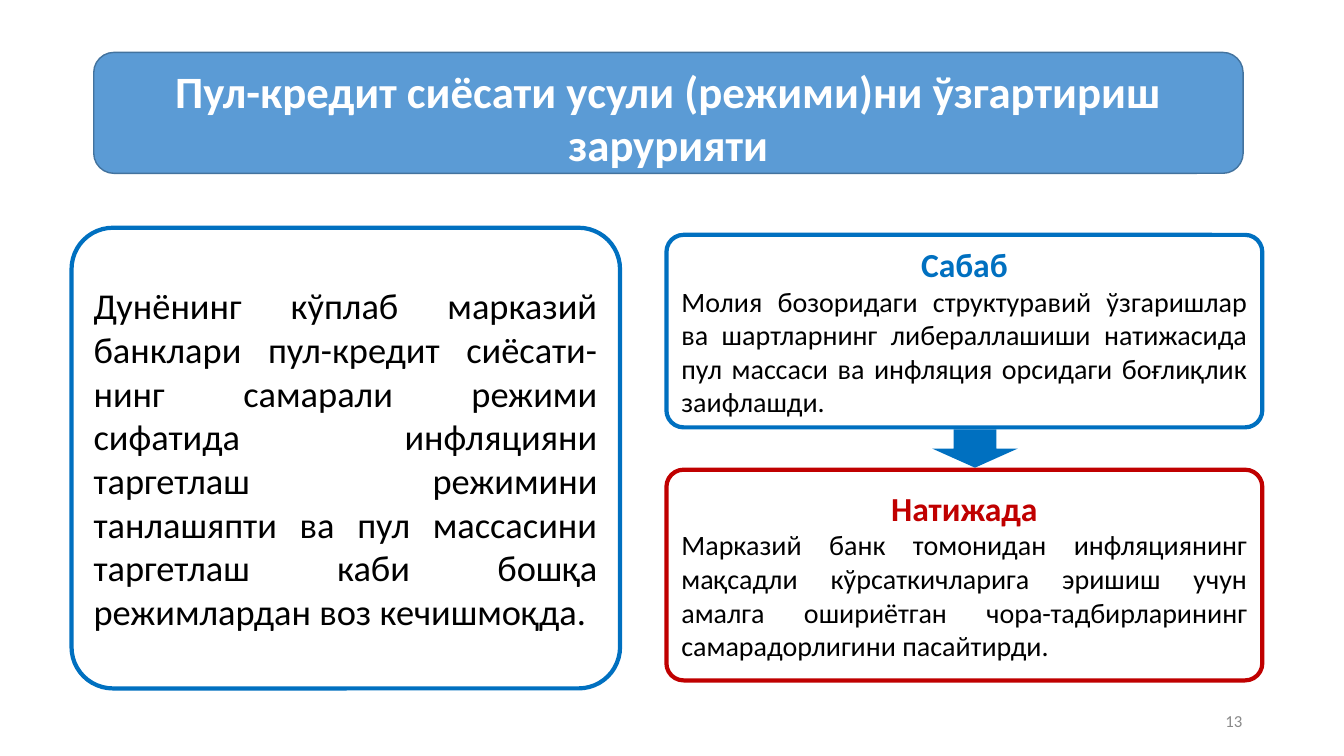
from dataclasses import dataclass

from pptx import Presentation
from pptx.dml.color import RGBColor
from pptx.enum.shapes import MSO_SHAPE
from pptx.enum.text import MSO_ANCHOR, PP_ALIGN
from pptx.util import Inches, Pt

# Content
TITLE = "Пул-кредит сиёсати усули (режими)ни ўзгартириш зарурияти"
OVERVIEW = (
    "Дунёнинг кўплаб марказий банклари пул-кредит сиёсати-нинг самарали "
    "режими сифатида инфляцияни таргетлаш режимини танлашяпти ва пул "
    "массасини таргетлаш каби бошқа режимлардан воз кечишмоқда."
)
CAUSE = (
    "Сабаб",
    "Молия бозоридаги структуравий ўзгаришлар ва шартларнинг либераллашиши "
    "натижасида пул массаси ва инфляция орсидаги боғлиқлик заифлашди.",
)
RESULT = (
    "Натижада",
    "Марказий банк томонидан инфляциянинг мақсадли кўрсаткичларига эришиш учун "
    "амалга ошириётган чора-тадбирларининг самарадорлигини пасайтирди.",
)
PAGE_NUMBER = "13"


@dataclass(frozen=True)
class Theme:
    font: str = "Calibri"
    blue: str = "0070C0"
    red: str = "C00000"
    banner: str = "5B9BD5"
    banner_edge: str = "43739E"
    ink: str = "000000"
    white: str = "FFFFFF"
    grey: str = "898989"
    title: int = 32
    overview: int = 26
    heading: int = 24
    body: int = 20
    number: int = 12
    frame: int = 3


THEME = Theme()

# Layout in inches: left, top, width, height
SLIDE_W, SLIDE_H = 13.33, 7.5
BANNER_BOX = (0.93, 0.52, 11.4, 1.2)
OVERVIEW_BOX = (0.71, 2.26, 5.44, 4.57)
RIGHT_COLUMN, RIGHT_W = 6.61, 5.91
CAUSE_BOX = (RIGHT_COLUMN, 2.33, RIGHT_W, 1.91)
RESULT_BOX = (RIGHT_COLUMN, 4.66, RIGHT_W, 2.09)
ARROW_W, ARROW_H = 0.85, 0.38
ARROW_CENTER = 9.67
NUMBER_BOX = (9.42, 6.95, 3, 0.4)
CORNER = 0.17  # corner radius of the right-hand cards
OVERVIEW_CORNER = 0.41


def add_shape(slide, kind, box, fill=None, line=None, width=1, radius=None):
    shape = slide.shapes.add_shape(kind, *map(Inches, box))
    shape.shadow.inherit = False
    if fill:
        shape.fill.solid()
        shape.fill.fore_color.rgb = RGBColor.from_string(fill)
    else:
        shape.fill.background()
    if line:
        shape.line.color.rgb = RGBColor.from_string(line)
        shape.line.width = Pt(width)
    else:
        shape.line.fill.background()
    if radius:
        shape.adjustments[0] = radius / min(box[2:])
    return shape


def write(shape, lines, anchor=MSO_ANCHOR.MIDDLE):
    """Each line is text, size, colour, bold, alignment."""
    frame = shape.text_frame
    frame.word_wrap = True
    frame.vertical_anchor = anchor
    frame.text = "\n".join(line[0] for line in lines)
    for paragraph, (_, size, color, bold, align) in zip(frame.paragraphs, lines):
        paragraph.alignment = align
        for run in paragraph.runs:
            run.font.name = THEME.font
            run.font.size = Pt(size)
            run.font.bold = bold
            run.font.color.rgb = RGBColor.from_string(color)


def add_card(slide, box, content, color):
    heading, body = content
    card = add_shape(slide, MSO_SHAPE.ROUNDED_RECTANGLE, box,
                     line=color, width=THEME.frame, radius=CORNER)
    write(card, [
        (heading, THEME.heading, color, True, PP_ALIGN.CENTER),
        (body, THEME.body, THEME.ink, False, PP_ALIGN.JUSTIFY),
    ])


def main():
    deck = Presentation()
    deck.slide_width, deck.slide_height = Inches(SLIDE_W), Inches(SLIDE_H)
    slide = deck.slides.add_slide(deck.slide_layouts[6])

    # Cause leads to result
    add_card(slide, CAUSE_BOX, CAUSE, THEME.blue)
    add_card(slide, RESULT_BOX, RESULT, THEME.red)
    gap_middle = (CAUSE_BOX[1] + CAUSE_BOX[3] + RESULT_BOX[1]) / 2
    arrow_box = (ARROW_CENTER - ARROW_W / 2, gap_middle - ARROW_H / 2, ARROW_W, ARROW_H)
    add_shape(slide, MSO_SHAPE.DOWN_ARROW, arrow_box, fill=THEME.blue)

    # Page number
    number = slide.shapes.add_textbox(*map(Inches, NUMBER_BOX))
    write(number, [(PAGE_NUMBER, THEME.number, THEME.grey, False, PP_ALIGN.RIGHT)])

    # Title banner
    banner = add_shape(slide, MSO_SHAPE.ROUNDED_RECTANGLE, BANNER_BOX,
                       fill=THEME.banner, line=THEME.banner_edge)
    write(banner, [(TITLE, THEME.title, THEME.white, True, PP_ALIGN.CENTER)],
          MSO_ANCHOR.TOP)

    # Overview
    overview = add_shape(slide, MSO_SHAPE.ROUNDED_RECTANGLE, OVERVIEW_BOX,
                         line=THEME.blue, width=THEME.frame, radius=OVERVIEW_CORNER)
    write(overview, [(OVERVIEW, THEME.overview, THEME.ink, False, PP_ALIGN.JUSTIFY)])

    deck.save("out.pptx")


if __name__ == "__main__":
    main()
